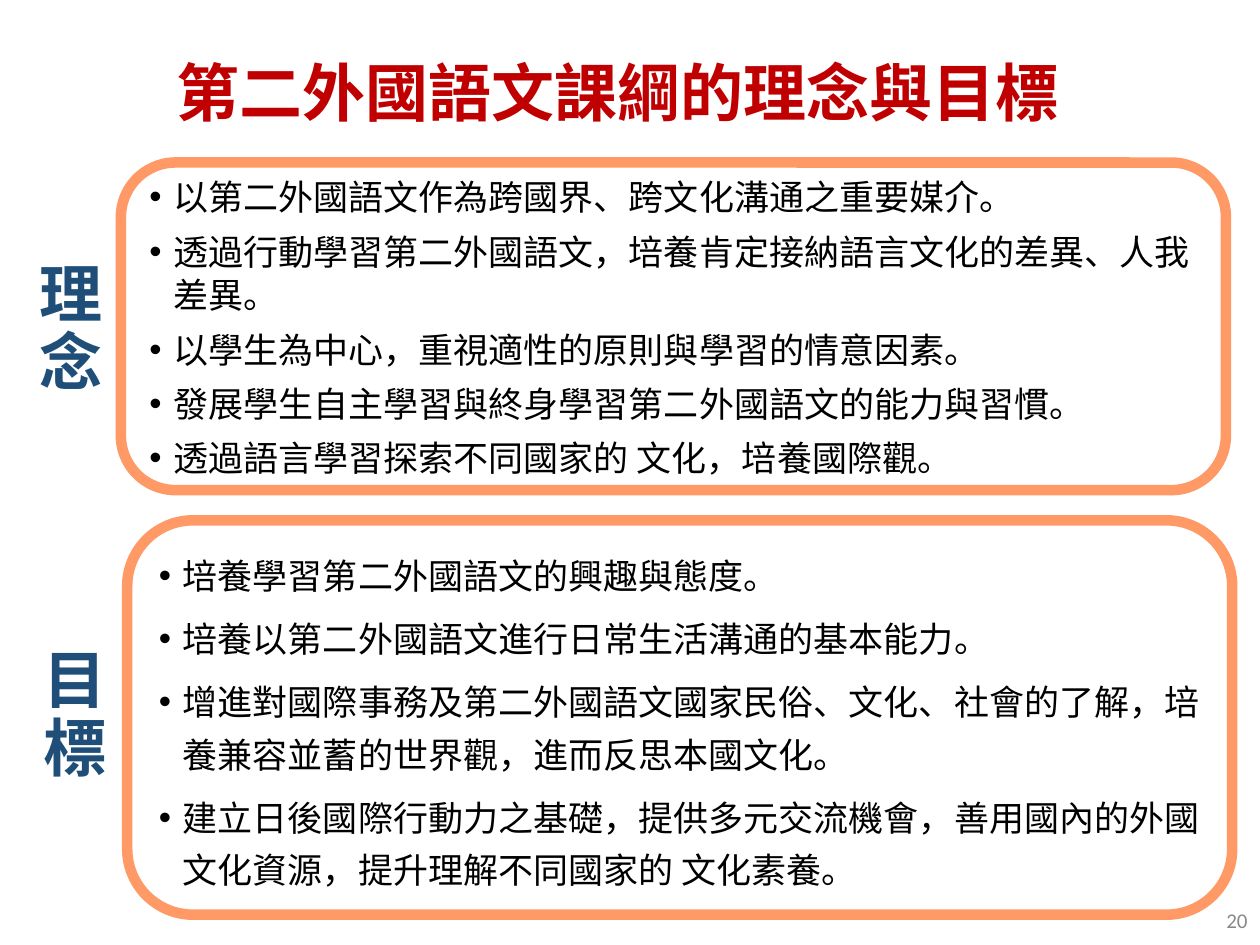
"""Build the slide on the ideas and goals of the second foreign language curriculum."""
from lxml import etree
from pptx import Presentation
from pptx import util as u
from pptx.dml.color import RGBColor
from pptx.enum import shapes, text
from pptx.oxml.ns import qn

CJK = "Noto Sans CJK SC"
TITLE = "第二外國語文課綱的理念與目標"
PAGE = "20"
GOALS = [
    "培養學習第二外國語文的興趣與態度。",
    "培養以第二外國語文進行日常生活溝通的基本能力。",
    "增進對國際事務及第二外國語文國家民俗、文化、社會的了解，培養兼容並蓄的世界觀，進而反思本國文化。",
    "建立日後國際行動力之基礎，提供多元交流機會，善用國內的外國文化資源，提升理解不同國家的 文化素養。",
]
IDEAS = [
    "以第二外國語文作為跨國界、跨文化溝通之重要媒介。",
    "透過行動學習第二外國語文，培養肯定接納語言文化的差異、人我差異。",
    "以學生為中心，重視適性的原則與學習的情意因素。",
    "發展學生自主學習與終身學習第二外國語文的能力與習慣。",
    "透過語言學習探索不同國家的 文化，培養國際觀。",
]
PANEL_WIDTH, LABEL_SIZE = 8.77, (0.91, 1.43)
SECTIONS = [
    {"label": "目標", "label_at": (0.14, 4.98), "items": GOALS,
     "panel": (1.01, 4.13, PANEL_WIDTH, 3.13), "leading": 30},
    {"label": "理念", "label_at": (0.11, 1.91), "items": IDEAS,
     "panel": (0.96, 1.29, PANEL_WIDTH, 2.6), "leading": 25},
]


def rgb(value):
    """Turn a hex string into a colour."""
    return RGBColor.from_string(value)


def inches(*lengths):
    """Turn plain numbers into inches."""
    return [u.Inches(length) for length in lengths]


def style(paragraph, size, color, bold=False, face=CJK):
    """Format every run of a paragraph."""
    for run in paragraph.runs:
        font = run.font
        font.size, font.bold, font.name = u.Pt(size), bold, face
        font.color.rgb = rgb(color)
        etree.SubElement(run._r.get_or_add_rPr(), qn("a:ea"), typeface=face)


def bullet(paragraph, indent):
    """Give a paragraph a round bullet with a hanging indent."""
    properties = paragraph._p.get_or_add_pPr()
    properties.set("marL", str(indent))
    properties.set("indent", str(-indent))
    etree.SubElement(properties, qn("a:buFont"), typeface="Arial")
    etree.SubElement(properties, qn("a:buChar"), char="•")


def add_panel(slide, box, items, leading):
    """Add a rounded panel holding a bulleted list."""
    panel = slide.shapes.add_shape(
        shapes.MSO_SHAPE.FLOWCHART_ALTERNATE_PROCESS, *inches(*box))
    panel.shadow.inherit = False
    panel.fill.solid()
    panel.fill.fore_color.rgb = rgb("FFFFFF")
    panel.line.color.rgb = rgb("FF9966")
    panel.line.width = u.Pt(6)
    frame = panel.text_frame
    frame.word_wrap = True
    frame.vertical_anchor = text.MSO_ANCHOR.MIDDLE
    frame.text = "\n".join(items)
    for index, paragraph in enumerate(frame.paragraphs):
        paragraph.alignment = text.PP_ALIGN.LEFT
        paragraph.line_spacing = u.Pt(leading)
        if index:
            paragraph.space_before = u.Pt(6)
        bullet(paragraph, u.Inches(0.19))
        style(paragraph, 20, "000000")


def add_caption(slide, box, words, align):
    """Add a one-paragraph text box and return its frame."""
    frame = slide.shapes.add_textbox(*inches(*box)).text_frame
    frame.word_wrap = True
    frame.vertical_anchor = text.MSO_ANCHOR.MIDDLE
    frame.text = words
    frame.paragraphs[0].alignment = align
    return frame


def add_title(slide):
    """Place and format the title."""
    title = slide.shapes.title
    title.left, title.top, title.width, title.height = inches(0.59, 0, 8.62, 1.45)
    frame = title.text_frame
    frame.text = TITLE
    frame.vertical_anchor = text.MSO_ANCHOR.MIDDLE
    frame.paragraphs[0].alignment = text.PP_ALIGN.CENTER
    style(frame.paragraphs[0], 36, "C00000", bold=True)


def main():
    """Build and save the slide."""
    deck = Presentation()
    deck.slide_width, deck.slide_height = inches(10, 7.5)
    slide = deck.slides.add_slide(deck.slide_layouts[5])
    add_title(slide)
    for section in SECTIONS:
        add_panel(slide, section["panel"], section["items"], section["leading"])
    page = add_caption(slide, (7.75, 7.1, 2.25, 0.4), PAGE, text.PP_ALIGN.RIGHT)
    style(page.paragraphs[0], 12, "898989", face="Calibri")
    for section in SECTIONS:
        label = add_caption(slide, section["label_at"] + LABEL_SIZE,
                            section["label"], text.PP_ALIGN.CENTER)
        label.margin_left = label.margin_right = u.Inches(0.15)
        label.margin_top = label.margin_bottom = u.Inches(0.07)
        label.paragraphs[0].line_spacing = 0.9
        style(label.paragraphs[0], 36, "1F4E79", bold=True)
    deck.save("out.pptx")


if __name__ == "__main__":
    main()
